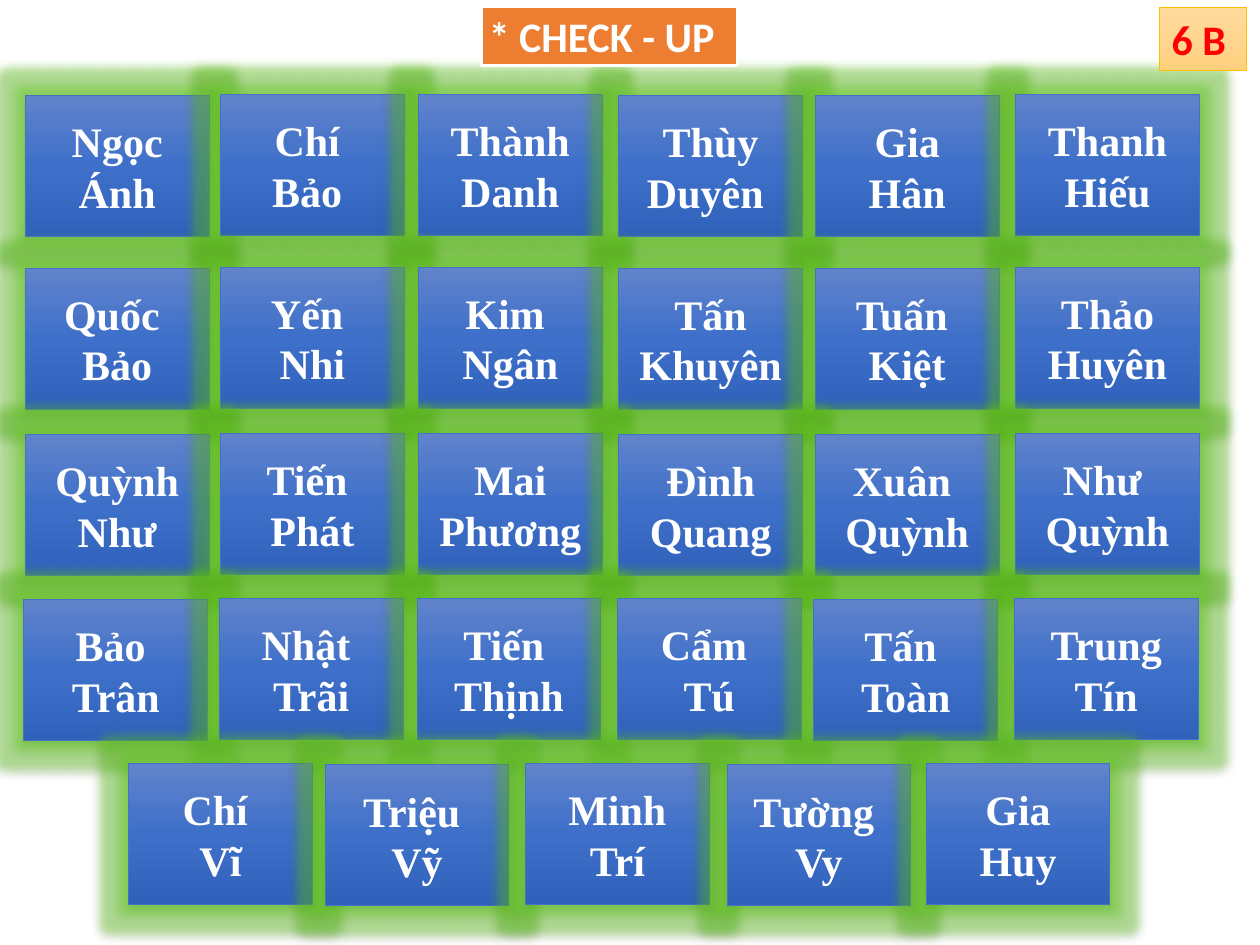
from copy import deepcopy
from dataclasses import dataclass

from lxml import etree
from pptx import Presentation
from pptx.dml.color import RGBColor
from pptx.enum.shapes import MSO_SHAPE
from pptx.enum.text import MSO_ANCHOR, MSO_AUTO_SIZE, PP_ALIGN
from pptx.oxml.ns import qn
from pptx.util import Inches, Pt

RECT = MSO_SHAPE.RECTANGLE
MIDDLE, TOP = MSO_ANCHOR.MIDDLE, MSO_ANCHOR.TOP
CENTER, LEFT = PP_ALIGN.CENTER, PP_ALIGN.LEFT
GROW, FIXED = MSO_AUTO_SIZE.SHAPE_TO_FIT_TEXT, MSO_AUTO_SIZE.NONE


@dataclass(frozen=True)
class Theme:
    white: str = "FFFFFF"
    red: str = "FF0000"
    orange: tuple = ("ED7D31",)
    amber: tuple = ("FFDB9E", "FFD590", "FFD07C")
    amber_line: str = "FFC000"
    blue: tuple = ("6183CB", "3E70CA", "3062BB")
    blue_line: str = "4472C4"
    glow: str = "70AD47"
    shadow: str = "000000"
    name_font: str = "Times New Roman"
    label_font: str = "Calibri"
    size: int = 24


THEME = Theme()


@dataclass(frozen=True)
class Style:
    fill: tuple
    line: str
    line_width: float
    font: str
    color: str
    inset: tuple
    align: PP_ALIGN = LEFT
    anchor: MSO_ANCHOR = TOP
    auto_size: MSO_AUTO_SIZE = GROW


CARD = Style(THEME.blue, THEME.blue_line, 0.5, THEME.name_font, THEME.white,
             (0.06, 0.03), CENTER, MIDDLE, FIXED)
TITLE = Style(THEME.orange, THEME.white, 1.5, THEME.label_font, THEME.white, (0.06, 0.03))
BADGE = Style(THEME.amber, THEME.amber_line, 0.5, THEME.label_font, THEME.red, (0.1, 0.05))


@dataclass(frozen=True)
class Row:
    """Cards sharing a top edge; the lowered columns sit one step below it."""
    top: float
    lefts: tuple
    lowered: tuple
    names: tuple
    shift: float = 0


CARD_W, CARD_H, STEP = 1.46, 1.12, 0.01
SIX = (0.2, 1.75, 3.32, 4.91, 6.47, 8.06)
FIVE = (1.02, 2.58, 4.17, 5.77, 7.35)

ROWS = (
    Row(0.75, SIX, (0, 3, 4),
        ("Ngọc Ánh", "Chí \nBảo ", "Thành Danh", "Thùy Duyên ", "Gia\nHân", "Thanh\nHiếu")),
    Row(2.12, SIX, (0, 3, 4),
        ("Quốc \nBảo", "Yến \nNhi", "Kim \nNgân", "Tấn Khuyên", "Tuấn \nKiệt", "Thảo Huyên")),
    Row(3.44, SIX, (0, 3, 4),
        ("Quỳnh Như", "Tiến \nPhát", "Mai\nPhương", "Đình\nQuang", "Xuân \nQuỳnh", "Như \nQuỳnh")),
    Row(4.75, SIX, (0, 4),
        ("Bảo \nTrân", "Nhật \nTrãi", "Tiến \nThịnh", "Cẩm \nTú", "Tấn \nToàn", "Trung Tín"),
        -STEP),
    Row(6.06, FIVE, (1, 3),
        ("Chí \nVĩ", "Triệu \nVỹ", "Minh\nTrí", "Tường \nVy", "Gia\nHuy")),
)


def paint(sp, colors: tuple) -> None:
    """Fill with one solid colour, or a top-to-bottom three-stop gradient."""
    fill = sp.fill
    if len(colors) == 1:
        fill.solid()
        fill.fore_color.rgb = RGBColor.from_string(colors[0])
        return
    fill.gradient()
    fill.gradient_angle = 270
    first = sp._element.spPr.find(f".//{qn('a:gs')}")
    first.addnext(deepcopy(first))
    for i, (stop, color) in enumerate(zip(fill.gradient_stops, colors)):
        stop.position = i / (len(colors) - 1)
        stop.color.rgb = RGBColor.from_string(color)


def add_effect(parent, tag: str, color: str, alpha: int, mods: dict, **attrs: str) -> None:
    effect = etree.SubElement(parent, qn(tag), attrs)
    clr = etree.SubElement(effect, qn("a:srgbClr"), val=color)
    for mod, value in mods.items():
        etree.SubElement(clr, qn(mod), val=str(value * 1000))
    etree.SubElement(clr, qn("a:alpha"), val=str(alpha * 1000))


def add_box(slide, left: float, top: float, width: float, height: float,
            text: str, style: Style):
    sp = slide.shapes.add_shape(RECT, Inches(left), Inches(top), Inches(width), Inches(height))
    paint(sp, style.fill)
    sp.line.color.rgb = RGBColor.from_string(style.line)
    sp.line.width = Pt(style.line_width)
    sp.shadow.inherit = False
    tf = sp.text_frame
    tf.word_wrap = True
    tf.auto_size = style.auto_size
    tf.vertical_anchor = style.anchor
    tf.margin_left = tf.margin_right = Inches(style.inset[0])
    tf.margin_top = tf.margin_bottom = Inches(style.inset[1])
    tf.text = text
    for p in tf.paragraphs:
        p.alignment = style.align
        p.font.name = style.font
        p.font.size = Pt(THEME.size)
        p.font.bold = True
        p.font.color.rgb = RGBColor.from_string(style.color)
    return sp


def add_card(slide, left: float, top: float, name: str) -> None:
    """Add a student card with a green glow and a soft shadow."""
    sp = add_box(slide, left, top, CARD_W, CARD_H, name, CARD)
    effects = sp._element.spPr.find(qn("a:effectLst"))
    add_effect(effects, "a:glow", THEME.glow, 40, {"a:satMod": 175}, rad=str(Pt(11)))
    add_effect(effects, "a:outerShdw", THEME.shadow, 35, {}, blurRad=str(Pt(3.1)),
               dist=str(Pt(1.8)), dir="5400000", rotWithShape="0")


def main() -> None:
    prs = Presentation()
    prs.slide_width, prs.slide_height = Inches(10), Inches(7.5)
    slide = prs.slides.add_slide(prs.slide_layouts[6])
    for row in ROWS:
        for col, (left, name) in enumerate(zip(row.lefts, row.names)):
            add_card(slide, left + row.shift, row.top + STEP * (col in row.lowered), name)
    add_box(slide, 3.82, 0.05, 2.03, 0.47, "* CHECK - UP", TITLE)
    add_box(slide, 9.2, 0.06, 0.69, 0.5, "6 B", BADGE)
    prs.save("out.pptx")


if __name__ == "__main__":
    main()
